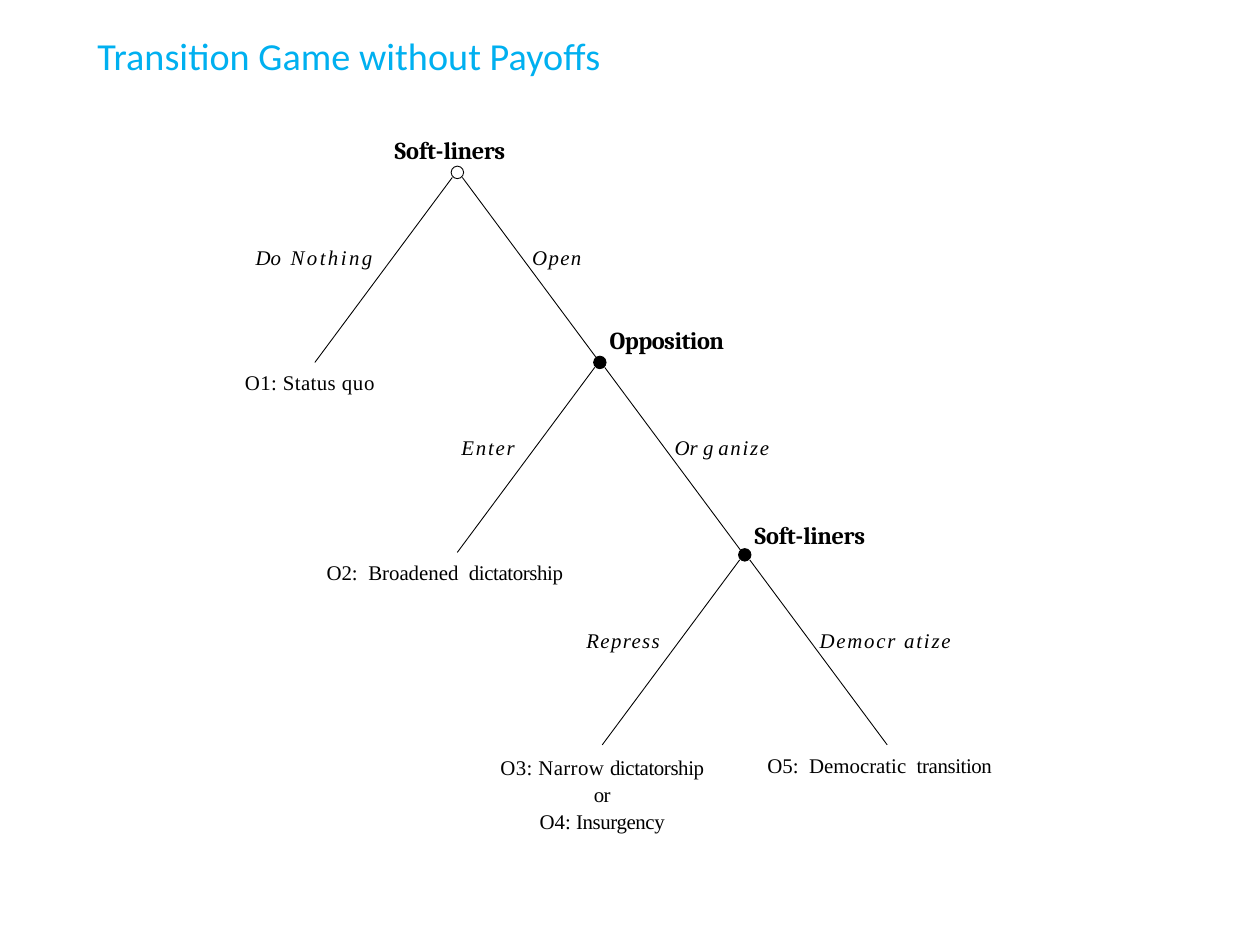
import pptx
import pptx.dml.color
import pptx.enum.shapes
import pptx.enum.text
import pptx.oxml.ns
import pptx.util
from lxml import etree

Inches = pptx.util.Inches
Pt = pptx.util.Pt
ALIGN = pptx.enum.text.PP_ALIGN

# Text formats
TITLE = {"name": "Calibri", "size": Pt(11)}
PLAYER = {"name": "Cambria", "size": Pt(7), "bold": True}
ACTION = {"name": "Times New Roman", "size": Pt(6), "italic": True}
OUTCOME = {"name": "Times New Roman", "size": Pt(6)}

# Tree geometry, relative to a decision node
NODE_SIZE = 0.05
BRANCH_START = 0.02
BRANCH_X, BRANCH_Y = 0.57, 0.76
ACTION_Y, OUTCOME_Y = 0.28, 0.78
OUTCOME_WIDTH = 1.06

# Text is a list of paragraphs, each a list of (wording, letter spacing)
SOFT_LINERS = [[("Soft-", 0), ("liners", -0.1)]]
# Each outcome: side of the node, shift of its centre from the branch end, text
DECISIONS = [
    {"node": (1.83, 0.69), "filled": False,
     "player": SOFT_LINERS, "player_at": (-0.26, -0.17),
     "left": [[("Do", 0), (" ", 1.2), ("Nothing", 0.7)]],
     "right": [[("Open", 0.4)]],
     "outcomes": [(-1, -0.02, [[("O1: Status ", 0.1), ("quo", 0.2)]])]},
    {"node": (2.4, 1.45), "filled": True,
     "player": [[("Opposition", -0.1)]], "player_at": (0.03, -0.17),
     "left": [[("Enter", 0.5)]],
     "right": [[("Or ", 0), ("g ", -0.1), ("anize", 0.5)]],
     "outcomes": [(-1, -0.05, [[("O2:", 0), (" ", 1.5), ("Broadened", 0),
                                (" ", 1.5), ("dictatorship", -0.1)]])]},
    {"node": (2.98, 2.22), "filled": True,
     "player": SOFT_LINERS, "player_at": (0.03, -0.16),
     "left": [[("Repress", 0.4)]], "right": [[("Democr atize", 0.5)]],
     "outcomes": [
         (-1, 0, [[("O3: Narrow ", 0.1), ("dictatorship", -0.1)],
                  [("or", -0.2)],
                  [("O4: ", 0), ("Insurgency", -0.1)]]),
         (1, -0.03, [[("O5:", 0), (" ", 1.5), ("Democratic", 0),
                      (" ", 1.5), ("transition", -0.1)]])]},
]


def color(hex_string):
    return pptx.dml.color.RGBColor.from_string(hex_string)


def add_text(slide, box, paragraphs, text_format, hex_color="000000",
             align=ALIGN.LEFT, left_inset=0, top_inset=0.01):
    text_box = slide.shapes.add_textbox(*map(Inches, box))
    frame = text_box.text_frame
    settings = {"word_wrap": True, "margin_left": Inches(left_inset),
                "margin_top": Inches(top_inset), "margin_right": 0, "margin_bottom": 0}
    for name, value in settings.items():
        setattr(frame, name, value)
    for index, runs in enumerate(paragraphs):
        paragraph = frame.add_paragraph() if index else frame.paragraphs[0]
        paragraph.alignment = align
        paragraph.space_before = Pt(0 if index else 0.9)
        if len(paragraphs) > 1:
            paragraph.line_spacing = 1.08
        for wording, spacing in runs:
            run = paragraph.add_run()
            run.text = wording
            for name, value in text_format.items():
                setattr(run.font, name, value)
            run.font.color.rgb = color(hex_color)
            if spacing:
                run._r.get_or_add_rPr().set("spc", str(round(spacing * 100)))


def add_branch(slide, x, y, side):
    branch = slide.shapes.add_connector(
        pptx.enum.shapes.MSO_CONNECTOR.STRAIGHT,
        Inches(x + side * BRANCH_START), Inches(y + BRANCH_START),
        Inches(x + side * BRANCH_X), Inches(y + BRANCH_Y))
    branch.line.color.rgb = color("000000")
    branch.line.width = Pt(0.25)
    etree.SubElement(branch._element.spPr, pptx.oxml.ns.qn("a:effectLst"))


def add_node(slide, x, y, filled):
    node = slide.shapes.add_shape(
        pptx.enum.shapes.MSO_SHAPE.OVAL,
        Inches(x - NODE_SIZE / 2), Inches(y - NODE_SIZE / 2),
        Inches(NODE_SIZE), Inches(NODE_SIZE))
    node.shadow.inherit = False
    if filled:
        node.fill.solid()
        node.fill.fore_color.rgb = color("000000")
    else:
        node.fill.background()
    node.line.color.rgb = color("000000")
    node.line.width = Pt(0.25)


def draw_title(slide, box):
    add_text(slide, box, [[("Transition Game without Payoffs", 0)]],
             TITLE, "00B0F0", left_inset=0.01, top_inset=0.02)


def draw_decision(slide, decision):
    x, y = decision["node"]

    # Branches and node
    for side in (-1, 1):
        add_branch(slide, x, y, side)
    add_node(slide, x, y, decision["filled"])

    # Player
    player_x, player_y = decision["player_at"]
    add_text(slide, (x + player_x, y + player_y, 0.6, 0.15),
             decision["player"], PLAYER, left_inset=0.01, top_inset=0.02)

    # Actions beside the branches
    add_text(slide, (x - 0.94, y + ACTION_Y, 0.6, 0.13),
             decision["left"], ACTION, align=ALIGN.RIGHT)
    add_text(slide, (x + 0.3, y + ACTION_Y, 0.6, 0.13),
             decision["right"], ACTION)

    # Outcomes below the branch ends
    for side, shift, paragraphs in decision["outcomes"]:
        left = x + side * BRANCH_X + shift - OUTCOME_WIDTH / 2
        add_text(slide, (left, y + OUTCOME_Y, OUTCOME_WIDTH, 0.13 * len(paragraphs)),
                 paragraphs, OUTCOME, align=ALIGN.CENTER)


def main():
    presentation = pptx.Presentation()
    presentation.slide_width = Pt(363)
    presentation.slide_height = Pt(272.5)
    slide = presentation.slides.add_slide(presentation.slide_layouts[6])
    draw_title(slide, (0.38, 0.11, 2.2, 0.2))
    for decision in DECISIONS:
        draw_decision(slide, decision)
    presentation.save("out.pptx")


if __name__ == "__main__":
    main()
